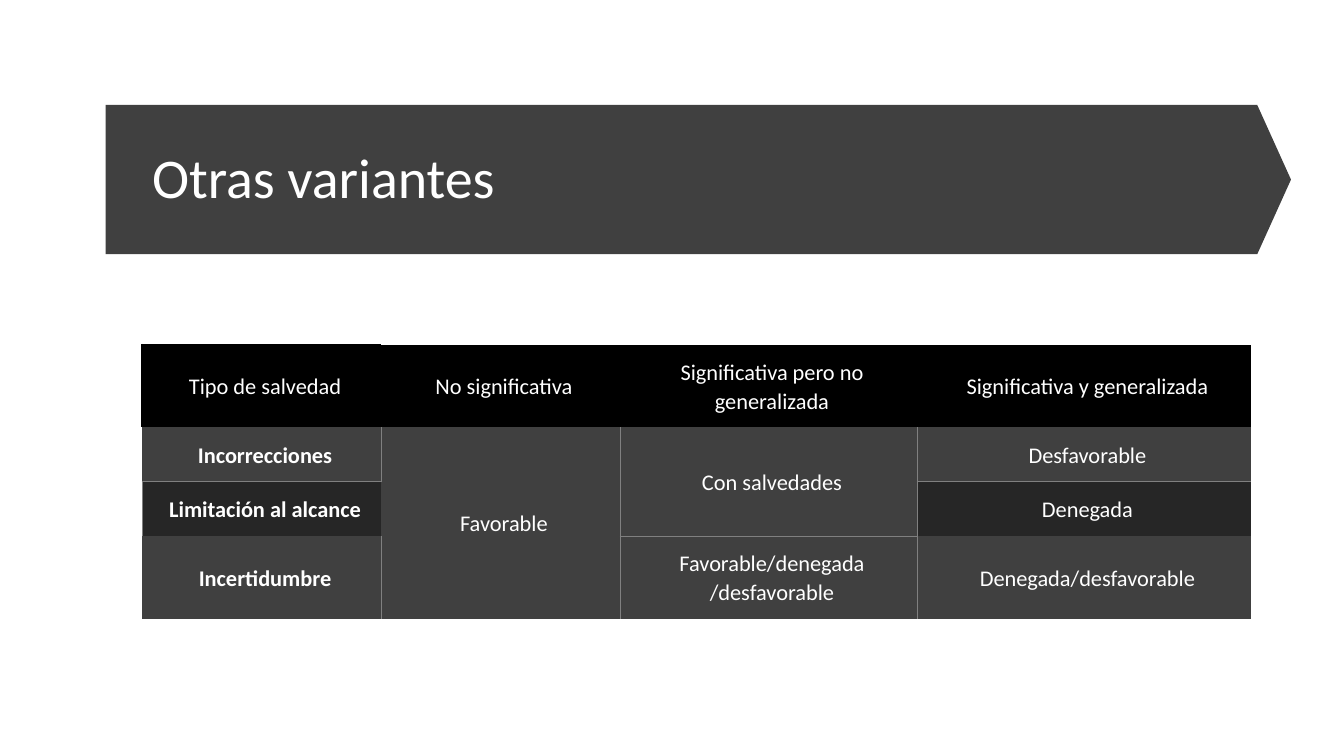
"""Build the slide 'Otras variantes' with its table of audit opinions."""
from lxml import etree
from pptx import Presentation
from pptx.dml.color import RGBColor
from pptx.enum.shapes import MSO_SHAPE
from pptx.enum.text import MSO_ANCHOR, PP_ALIGN
from pptx.oxml.ns import qn
from pptx.util import Cm, Pt

DOWN_ARROW = MSO_SHAPE.DOWN_ARROW
MIDDLE = MSO_ANCHOR.MIDDLE
LEFT, CENTER = PP_ALIGN.LEFT, PP_ALIGN.CENTER

FONT = "Calibri"
WHITE, BLACK, GREY = "FFFFFF", "000000", "808080"
DARK, DARKER = "404040", "262626"

COLUMN_WIDTHS = [6.02, 6.02, 7.49, 8.41]
ROW_HEIGHTS = [2.08, 1.37, 1.37, 2.08]
ROW_FILLS = [BLACK, DARK, DARKER, DARK]
OPINIONS = [
    ["Tipo de salvedad", "No significativa",
     "Significativa pero no generalizada", "Significativa y generalizada"],
    ["Incorrecciones", "Favorable", "Con salvedades", "Desfavorable"],
    ["Limitación al alcance", None, None, "Denegada"],
    ["Incertidumbre", None, "Favorable/denegada /desfavorable",
     "Denegada/desfavorable"],
]
EDGES = [
    ["LT", "", "", ""],
    ["RB", "LR", "LRB", "LB"],
    ["LT", "R", "LRB", "LT"],
    ["R", "LR", "LRT", "L"],
]
MERGES = [((1, 1), (3, 1)), ((1, 2), (2, 2))]


def set_fill(fill, color):
    """Make a fill solid in the given hex colour."""
    fill.solid()
    fill.fore_color.rgb = RGBColor.from_string(color)


def add_run(paragraph, text, size, bold=False):
    """Add one white run to a paragraph."""
    run = paragraph.add_run()
    run.text = text
    run.font.name = FONT
    run.font.size = Pt(size)
    run.font.bold = bold
    set_fill(run.font.fill, WHITE)


def set_borders(cell, edges, color, width):
    """Draw the listed cell edges and hide the others."""
    properties = cell._tc.get_or_add_tcPr()
    for side in "LRTB":
        line = etree.SubElement(properties, qn(f"a:ln{side}"))
        if side in edges:
            line.set("w", str(Pt(width)))
            solid = etree.SubElement(line, qn("a:solidFill"))
            etree.SubElement(solid, qn("a:srgbClr"), val=color)
        else:
            etree.SubElement(line, qn("a:noFill"))


def add_banner(slide):
    """Place the arrow banner behind the title."""
    banner = slide.shapes.add_shape(
        DOWN_ARROW, Cm(15.72), Cm(-10.41), Cm(3.76), Cm(29.87))
    banner.rotation = 270
    banner.adjustments[0] = 1
    banner.adjustments[1] = 0.226
    banner.shadow.inherit = False
    set_fill(banner.fill, DARK)
    banner.line.fill.background()
    slide.shapes.element.insert(2, banner.element)


def add_title(slide, text):
    """Fill and place the title placeholder."""
    title = slide.shapes.title
    title.left, title.top = Cm(3.58), Cm(3.35)
    title.width, title.height = Cm(27.84), Cm(2.39)
    title.text_frame.vertical_anchor = MIDDLE
    title.text_frame.word_wrap = True
    paragraph = title.text_frame.paragraphs[0]
    paragraph.alignment = LEFT
    paragraph.line_spacing = 0.9
    add_run(paragraph, text, 40)


def format_cell(cell, text, fill, bold):
    """Set margins, fill and centred text of a cell."""
    cell.margin_left, cell.margin_right = Cm(0.38), Cm(0.2)
    cell.margin_top = cell.margin_bottom = Cm(0.28)
    cell.vertical_anchor = MIDDLE
    set_fill(cell.fill, fill)
    if text:
        paragraph = cell.text_frame.paragraphs[0]
        paragraph.alignment = CENTER
        paragraph.line_spacing = 1.07
        paragraph.space_after = Pt(8)
        add_run(paragraph, text, 16, bold)


def add_opinion_table(slide):
    """Add the table of opinions by kind of qualification."""
    table = slide.shapes.add_table(
        len(ROW_HEIGHTS), len(COLUMN_WIDTHS), Cm(3.58), Cm(8.69),
        Cm(sum(COLUMN_WIDTHS)), Cm(sum(ROW_HEIGHTS))).table
    table.first_row = table.horz_banding = False
    for column, width in zip(table.columns, COLUMN_WIDTHS):
        column.width = Cm(width)
    for row, height in zip(table.rows, ROW_HEIGHTS):
        row.height = Cm(height)
    for r, texts in enumerate(OPINIONS):
        border = (GREY, 0.5) if r else (BLACK, 1.5)
        for c, text in enumerate(texts):
            cell = table.cell(r, c)
            set_borders(cell, EDGES[r][c], *border)
            format_cell(cell, text, ROW_FILLS[r], bold=r > 0 and c == 0)
    for first, last in MERGES:
        table.cell(*first).merge(table.cell(*last))


def main():
    """Build and save the presentation."""
    presentation = Presentation()
    presentation.slide_width, presentation.slide_height = Cm(33.87), Cm(19.05)
    slide = presentation.slides.add_slide(presentation.slide_layouts[5])
    set_fill(slide.background.fill, WHITE)
    add_banner(slide)
    add_title(slide, "Otras variantes")
    add_opinion_table(slide)
    presentation.save("out.pptx")


if __name__ == "__main__":
    main()
